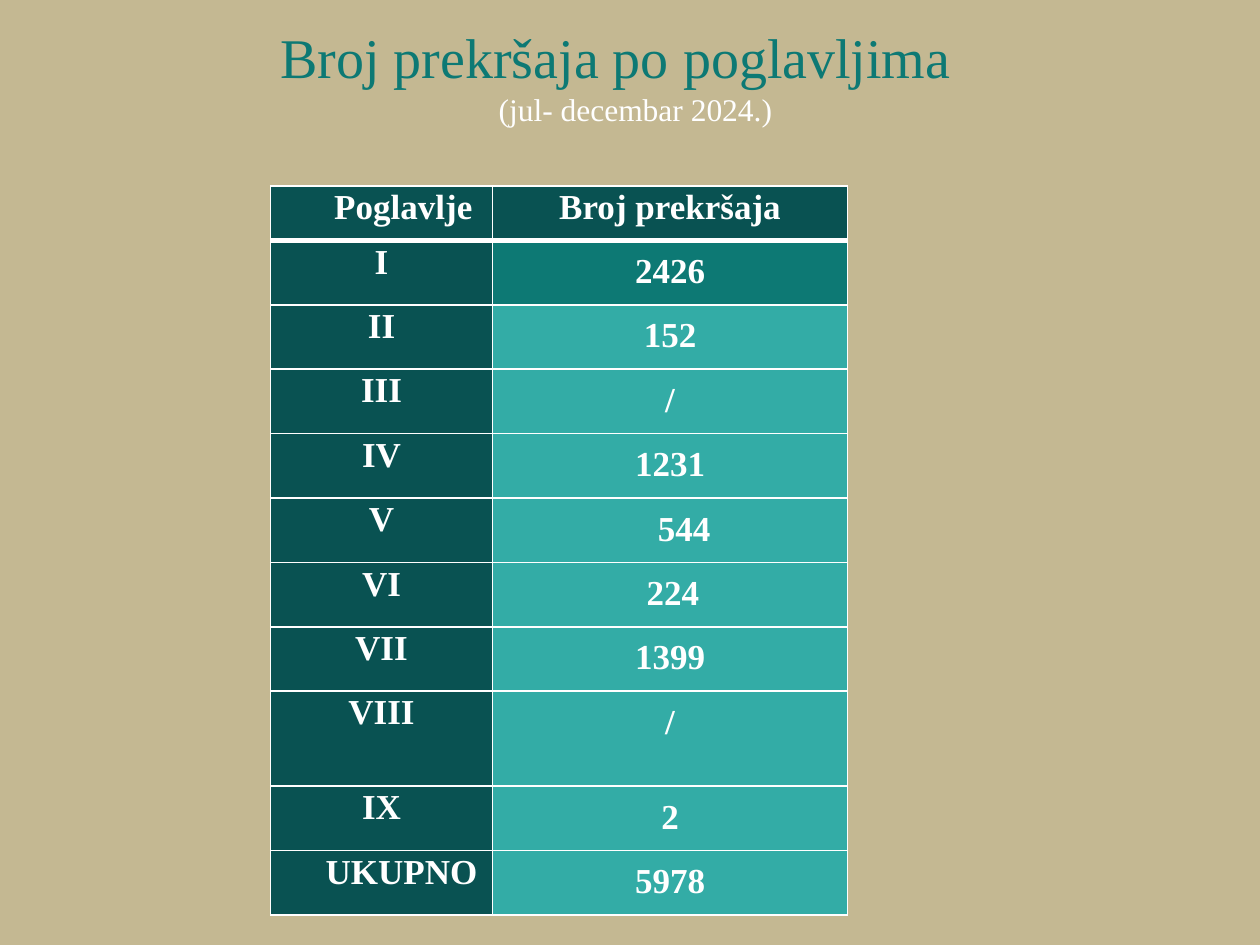
from dataclasses import dataclass

from lxml.etree import SubElement
from pptx import Presentation
from pptx.dml.color import RGBColor
from pptx.enum.text import MSO_ANCHOR as Anchor, MSO_AUTO_SIZE as AutoSize, PP_ALIGN as Align
from pptx.oxml import parse_xml
from pptx.oxml.ns import nsdecls, qn
from pptx.util import Pt


@dataclass(frozen=True)
class Theme:
    font: str = "Times New Roman"
    sand: str = "C4B892"
    white: str = "FFFFFF"
    dark: str = "095252"
    teal: str = "0D7974"
    light: str = "33ACA6"
    title_size: int = 32
    subtitle_size: int = 18
    table_size: int = 20
    thin: int = 1
    thick: int = 3


THEME = Theme()
HEADER = ("Poglavlje", "Broj prekršaja")
CHAPTERS = (
    ("I", "2426"), ("II", "152"), ("III", "/"), ("IV", "1231"), ("V", "544"),
    ("VI", "224"), ("VII", "1399"), ("VIII", "/"), ("IX", "2"), ("UKUPNO", "5978"),
)
COLUMN_WIDTHS = (126.8, 203)
HEADER_HEIGHT, ROW_HEIGHT, TALL_HEIGHT = 31, 36.8, 54.2
RIGHT_MARGINS = {"Poglavlje": 11.4, "UKUPNO": 8.6}
LEFT_MARGINS = {"544": 16, "224": 3.4}


def format_paragraph(para, size, color, align, bold=False):
    para.alignment = align
    for span in para.runs:
        span.font.name = THEME.font
        span.font.size = Pt(size)
        span.font.bold = bold
        span.font.color.rgb = RGBColor.from_string(color)


def set_margins(target, left=0, top=0, right=0):
    target.margin_left, target.margin_top = Pt(left), Pt(top)
    target.margin_right, target.margin_bottom = Pt(right), Pt(0)


def set_borders(cell, top, bottom):
    properties = cell._tc.get_or_add_tcPr()
    sides = (("lnL", THEME.thin), ("lnR", THEME.thin), ("lnT", top), ("lnB", bottom))
    for index, (side, width) in enumerate(sides):
        line = parse_xml(f'<a:{side} {nsdecls("a")} w="{Pt(width)}"/>')
        fill = SubElement(line, qn("a:solidFill"))
        SubElement(fill, qn("a:srgbClr"), val=THEME.white)
        properties.insert(index, line)


def fill_cell(cell, text, color, top_margin, row):
    cell.text = text
    cell.vertical_anchor = Anchor.TOP
    set_margins(cell, LEFT_MARGINS.get(text, 0), top_margin, RIGHT_MARGINS.get(text, 0))
    align = Align.RIGHT if text in RIGHT_MARGINS else Align.CENTER
    format_paragraph(cell.text_frame.paragraphs[0], THEME.table_size, THEME.white, align, True)
    cell.fill.solid()
    cell.fill.fore_color.rgb = RGBColor.from_string(color)
    set_borders(cell,
                THEME.thick if row == 1 else THEME.thin,
                THEME.thick if row == 0 else THEME.thin)


def add_heading(page, left, top, width, height):
    box = page.shapes.title
    box.left, box.top, box.width, box.height = Pt(left), Pt(top), Pt(width), Pt(height)
    frame = box.text_frame
    frame.text = "Broj prekršaja po poglavljima\n(jul- decembar 2024.)"
    frame.word_wrap = True
    frame.auto_size = AutoSize.NONE
    frame.vertical_anchor = Anchor.TOP
    set_margins(frame, top=15.1)
    title, period = frame.paragraphs
    format_paragraph(title, THEME.title_size, THEME.teal, Align.LEFT)
    format_paragraph(period, THEME.subtitle_size, THEME.white, Align.CENTER)
    for para, indent in ((title, 130), (period, 6.5)):
        para._p.get_or_add_pPr().set("marL", str(Pt(indent)))


def add_chapter_table(page, left, top):
    rows = (HEADER, *CHAPTERS)
    heights = [HEADER_HEIGHT] + [
        TALL_HEIGHT if chapter == "VIII" else ROW_HEIGHT for chapter, _ in CHAPTERS
    ]
    table = page.shapes.add_table(
        len(rows), len(HEADER), Pt(left), Pt(top),
        Pt(sum(COLUMN_WIDTHS)), Pt(sum(heights)),
    ).table
    table.horz_banding = False
    for column, width in zip(table.columns, COLUMN_WIDTHS):
        column.width = Pt(width)
    for row, ((chapter, count), height) in enumerate(zip(rows, heights)):
        table.rows[row].height = Pt(height)
        count_color = {0: THEME.dark, 1: THEME.teal}.get(row, THEME.light)
        fill_cell(table.cell(row, 0), chapter, THEME.dark, 1.4, row)
        fill_cell(table.cell(row, 1), count, count_color, 6.8 if row else 1.4, row)


def main():
    deck = Presentation()
    deck.slide_width, deck.slide_height = Pt(720), Pt(540)
    page = deck.slides.add_slide(deck.slide_layouts[5])
    page.background.fill.solid()
    page.background.fill.fore_color.rgb = RGBColor.from_string(THEME.sand)
    add_heading(page, 30.2, -2, 659.5, 75.6)
    add_chapter_table(page, 154.6, 106.4)
    deck.save("out.pptx")


if __name__ == "__main__":
    main()
